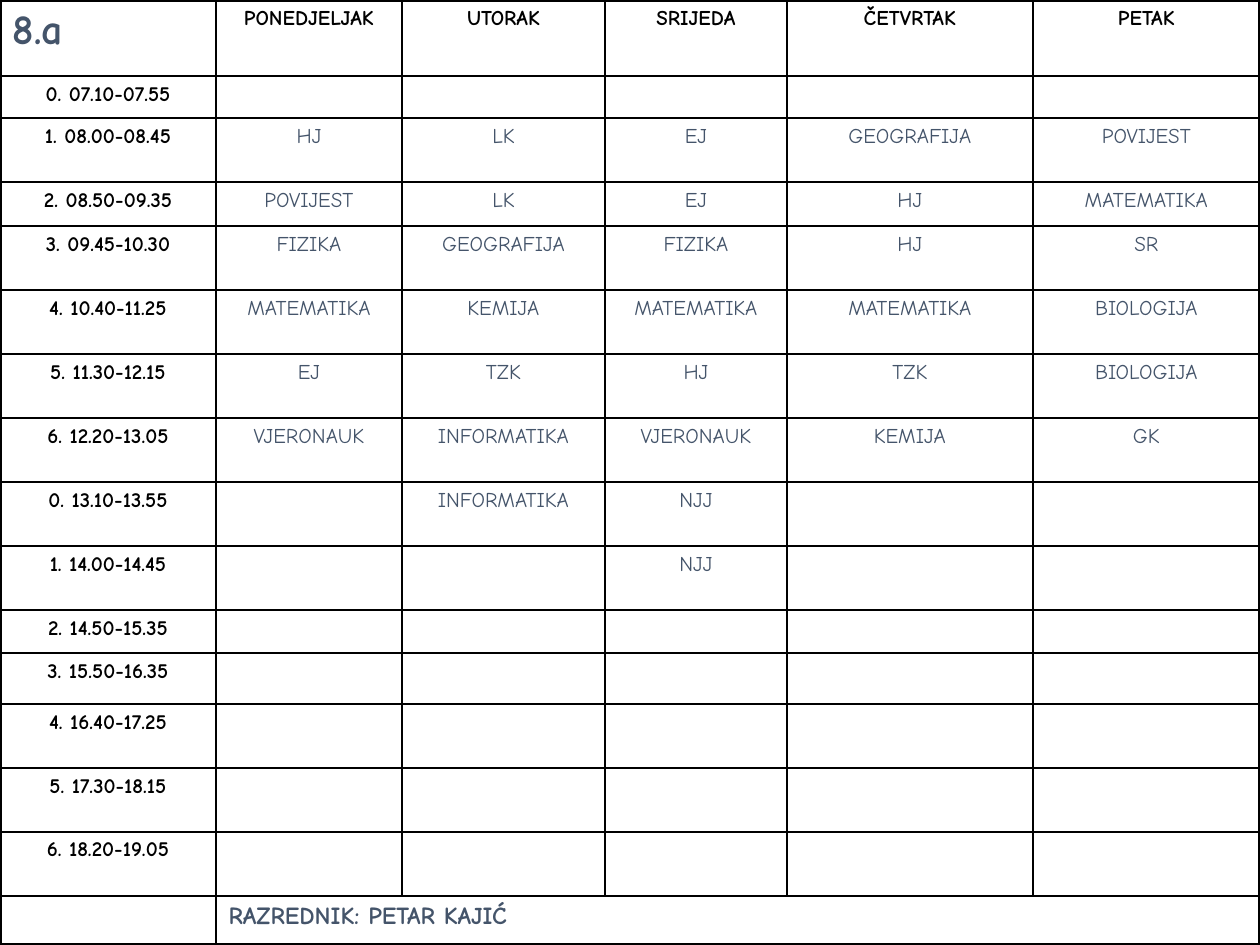
from pptx import Presentation
from pptx.dml.color import RGBColor as Color
from pptx.enum.text import PP_ALIGN as Align
from pptx.oxml.ns import qn
from pptx.util import Pt
from lxml.etree import SubElement

PX = 914400 // 126
SLIDE_SIZE = 1260, 945
COLUMN_WIDTHS = 216, 186, 203, 182, 246, 227
ROW_HEIGHTS = 76, 42, 64, 44, *[64] * 6, 43, 51, 64, 64, 64, 49

CLASS_NAME = "8.a"
CLASS_TEACHER = "RAZREDNIK: PETAR KAJIĆ"
DAYS = ["PONEDJELJAK", "UTORAK", "SRIJEDA", "ČETVRTAK", "PETAK"]
LESSONS = [
    ("0. 07.10-07.55", []),
    ("1. 08.00-08.45", ["HJ", "LK", "EJ", "GEOGRAFIJA", "POVIJEST"]),
    ("2. 08.50-09.35", ["POVIJEST", "LK", "EJ", "HJ", "MATEMATIKA"]),
    ("3. 09.45-10.30", ["FIZIKA", "GEOGRAFIJA", "FIZIKA", "HJ", "SR"]),
    ("4. 10.40-11.25", ["MATEMATIKA", "KEMIJA", "MATEMATIKA", "MATEMATIKA", "BIOLOGIJA"]),
    ("5. 11.30-12.15", ["EJ", "TZK", "HJ", "TZK", "BIOLOGIJA"]),
    ("6. 12.20-13.05", ["VJERONAUK", "INFORMATIKA", "VJERONAUK", "KEMIJA", "GK"]),
    ("0. 13.10-13.55", ["", "INFORMATIKA", "NJJ"]),
    ("1. 14.00-14.45", ["", "", "NJJ"]),
    ("2. 14.50-15.35", []),
    ("3. 15.50-16.35", []),
    ("4. 16.40-17.25", []),
    ("5. 17.30-18.15", []),
    ("6. 18.20-19.05", []),
]

THEME = {
    "font": "Comic Neue",
    "black": "000000",
    "slate": "44546A",
    "inner_line": 1,
    "outer_line": 2.25,
    "class": {"size": 24, "color": "slate", "bold": True, "align": Align.LEFT},
    "heading": {"size": 12, "color": "black", "bold": True, "align": Align.CENTER},
    "subject": {"size": 12, "color": "slate", "bold": False, "align": Align.CENTER},
    "teacher": {"size": 14, "color": "slate", "bold": True, "align": Align.LEFT},
}


def write(cell, text, style):
    look = THEME[style]
    para = cell.text_frame.paragraphs[0]
    para.alignment = look["align"]
    if not text:
        SubElement(para._p, qn("a:endParaRPr"), sz=str(look["size"] * 100))
        return
    span = para.add_run()
    span.text = text
    values = {"name": THEME["font"], "size": Pt(look["size"]), "bold": look["bold"]}
    for name, value in values.items():
        setattr(span.font, name, value)
    span.font.color.rgb = Color.from_string(THEME[look["color"]])


def draw_borders(cell, outer_sides):
    properties = cell._tc.get_or_add_tcPr()
    for side, is_outer in outer_sides.items():
        width = THEME["outer_line" if is_outer else "inner_line"]
        line = SubElement(properties, qn(f"a:ln{side}"), w=str(Pt(width)))
        fill = SubElement(line, qn("a:solidFill"))
        SubElement(fill, qn("a:srgbClr"), val=THEME["black"])


def style_of(row, column, last_row):
    if row == last_row:
        return "teacher"
    if row == column == 0:
        return "class"
    return "heading" if row == 0 or column == 0 else "subject"


def main():
    deck = Presentation()
    deck.slide_width, deck.slide_height = (length * PX for length in SLIDE_SIZE)
    page = deck.slides.add_slide(deck.slide_layouts[6])

    rows = [(CLASS_NAME, DAYS), *LESSONS, ("", [CLASS_TEACHER])]
    last_row, last_column = len(rows) - 1, len(DAYS)
    frame = page.shapes.add_table(
        len(rows), len(DAYS) + 1, 0, 0, deck.slide_width, deck.slide_height
    )
    timetable = frame.table
    timetable.first_row = timetable.horz_banding = False
    for column, width in zip(timetable.columns, COLUMN_WIDTHS):
        column.width = width * PX
    for row, height in zip(timetable.rows, ROW_HEIGHTS):
        row.height = height * PX
    timetable.cell(last_row, 1).merge(timetable.cell(last_row, last_column))

    for r, (label, entries) in enumerate(rows):
        texts = [label, *entries]
        texts += [""] * (last_column + 1 - len(texts))
        for c, text in enumerate(texts):
            cell = timetable.cell(r, c)
            write(cell, text, style_of(r, c, last_row))
            draw_borders(cell, {
                "L": c == 0,
                "R": c + cell.span_width - 1 == last_column,
                "T": r == 0,
                "B": r == last_row,
            })
            cell.fill.background()

    deck.save("out.pptx")


if __name__ == "__main__":
    main()
